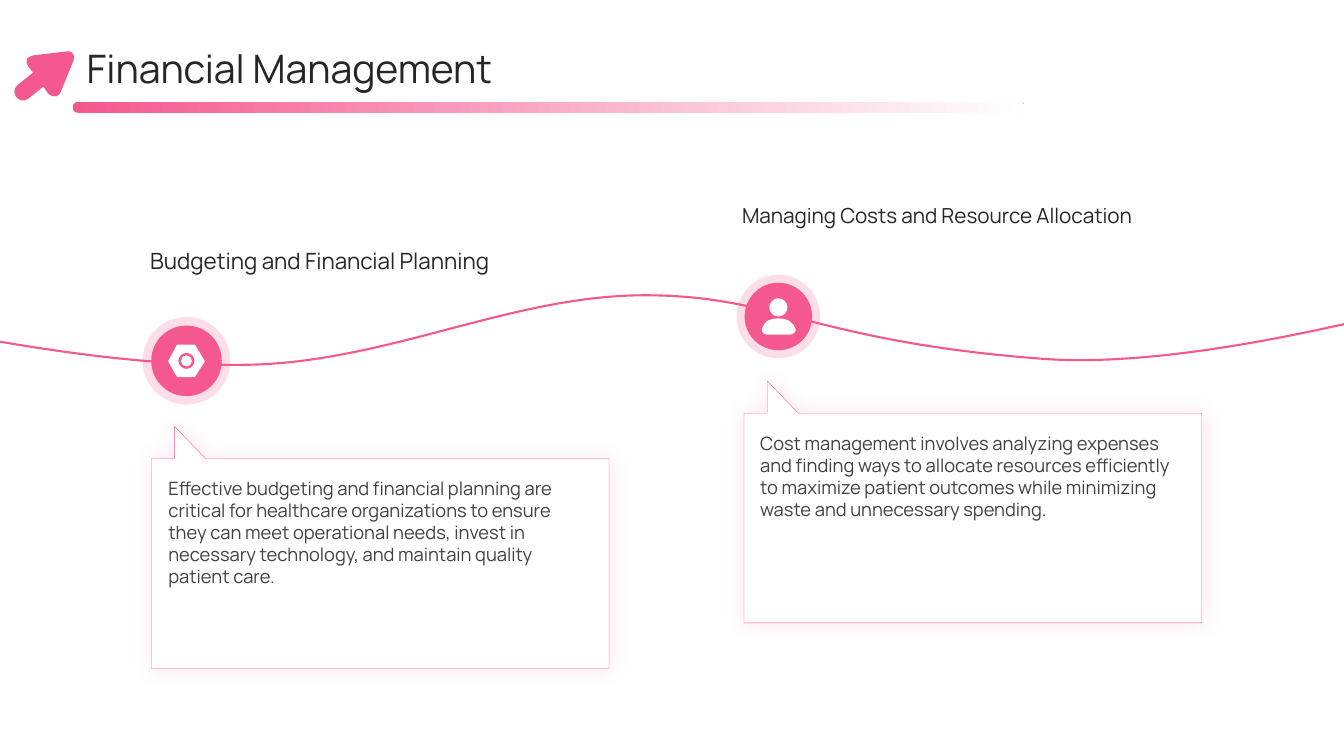
from dataclasses import dataclass

from lxml import etree
from pptx import Presentation
from pptx.dml.color import RGBColor
from pptx.enum.shapes import MSO_SHAPE
from pptx.enum.text import MSO_ANCHOR, MSO_AUTO_SIZE, PP_ALIGN
from pptx.oxml.ns import qn
from pptx.util import Inches, Pt

ELLIPSE = MSO_SHAPE.OVAL
ROUNDED = MSO_SHAPE.ROUNDED_RECTANGLE
LEFT = PP_ALIGN.LEFT
TOP, MIDDLE = MSO_ANCHOR.TOP, MSO_ANCHOR.MIDDLE
NO_AUTOFIT = MSO_AUTO_SIZE.NONE

FONT = "Manrope"
SLIDE_WIDTH, SLIDE_HEIGHT = 13.33, 7.5
COLORS = {"pink": "F4588E", "white": "FFFFFF", "heading": "262626", "body": "404040"}

Point = tuple[float, float]
# A path starts at a point; later steps are line ends (2 numbers) or cubic curves (6 numbers).
Path = list[tuple[float, ...]]

WAVE: Path = [(-2.16, 2.96), (-0.6, 3.29, 0.96, 3.63, 2.38, 3.62),
              (3.79, 3.62, 5.03, 2.94, 6.36, 2.93), (7.69, 2.92, 8.07, 3.39, 10.34, 3.56),
              (12.61, 3.73, 16.85, 2.2, 17.57, 1.97)]
ARROW: Path = [(0.27, 0.58), (0.26, 0.6, 0.26, 0.62, 0.28, 0.66), (0.33, 0.72), (0.18, 0.84),
               (0.14, 0.87, 0.13, 0.92, 0.16, 0.96), (0.19, 1, 0.24, 1.01, 0.28, 0.98),
               (0.43, 0.86), (0.48, 0.93), (0.48, 0.93, 0.55, 1, 0.6, 0.92), (0.73, 0.6),
               (0.73, 0.6, 0.76, 0.5, 0.66, 0.51), (0.33, 0.55), (0.33, 0.55, 0.29, 0.56, 0.27, 0.58)]
# Callout and icon outlines are measured from the callout corner and the badge centre.
CALLOUT: Path = [(0.23, 0), (0.54, 0.32), (4.54, 0.32), (4.54, 2.4), (0, 2.4), (0, 0.32), (0.23, 0.32)]
NUT: Path = [(-0.09, -0.16), (0.08, -0.16), (0.09, -0.16, 0.09, -0.16, 0.09, -0.15), (0.18, 0),
             (0.18, 0, 0.18, 0.01, 0.18, 0.01), (0.09, 0.15), (0.09, 0.16, 0.09, 0.16, 0.08, 0.16),
             (-0.09, 0.16), (-0.09, 0.16, -0.1, 0.16, -0.1, 0.15), (-0.18, 0.01),
             (-0.18, 0.01, -0.18, 0, -0.18, 0), (-0.1, -0.15), (-0.1, -0.16, -0.09, -0.16, -0.09, -0.16)]
SHOULDERS: Path = [(0, 0.02), (0.11, 0.02, 0.15, 0.07, 0.17, 0.12), (0.18, 0.15, 0.15, 0.18, 0.12, 0.18),
                   (-0.11, 0.18), (-0.15, 0.18, -0.17, 0.15, -0.16, 0.12),
                   (-0.15, 0.07, -0.11, 0.02, 0, 0.02)]


@dataclass
class Milestone:
    heading: str
    heading_at: Point
    heading_size: float
    body: str
    body_at: Point
    callout_at: Point
    center: Point
    halo: float
    disc: float
    icon: list[Path]


def circle(radius: float, y: float = 0) -> Path:
    """Four curves around a point on the vertical axis."""
    r, k = radius, radius * 0.55
    return [(0, y - r), (k, y - r, r, y - k, r, y), (r, y + k, k, y + r, 0, y + r),
            (-k, y + r, -r, y + k, -r, y), (-r, y - k, -k, y - r, 0, y - r)]


def rgb(name: str) -> RGBColor:
    return RGBColor.from_string(COLORS[name])


def paint(shape, fill: str | None, line: str | None = None, width: float = 0, alpha: int = 100):
    shape.shadow.inherit = False
    if fill:
        shape.fill.solid()
        shape.fill.fore_color.rgb = rgb(fill)
        if alpha < 100:
            color = shape.fill._xPr.find(qn("a:solidFill"))[0]
            etree.SubElement(color, qn("a:alpha"), val=str(alpha * 1000))
    else:
        shape.fill.background()
    if line:
        shape.line.color.rgb = rgb(line)
        shape.line.width = Pt(width)
    else:
        shape.line.fill.background()
    return shape


def add_outline(slide, paths: list[Path], origin: Point = (0, 0), closed: bool = True):
    """Build a freeform, then join the line triples that stand for curves."""
    left, top = origin
    builder = None
    for path in paths:
        start, *points = [(Inches(left + step[i]), Inches(top + step[i + 1]))
                          for step in path for i in range(0, len(step), 2)]
        if builder is None:
            builder = slide.shapes.build_freeform(*start, scale=1.0)
        else:
            builder.move_to(*start)
        builder.add_line_segments(points, close=closed)
    shape = builder.convert_to_shape()

    segments = iter(list(shape._element.spPr.iter(qn("a:lnTo"))))
    for step in (step for path in paths for step in path[1:]):
        first = next(segments)
        if len(step) == 6:
            curve = etree.Element(qn("a:cubicBezTo"))
            first.addprevious(curve)
            for segment in (first, next(segments), next(segments)):
                curve.append(segment[0])
                segment.getparent().remove(segment)
    return shape


def add_glow_shadow(shape) -> None:
    effects = shape._element.spPr.find(qn("a:effectLst"))
    shadow = etree.SubElement(effects, qn("a:outerShdw"), blurRad=str(Pt(15)), dist="0", dir="0",
                              algn="ctr", rotWithShape="0")
    color = etree.SubElement(shadow, qn("a:srgbClr"), val=COLORS["pink"])
    etree.SubElement(color, qn("a:alpha"), val="15000")


def place(shape, left: float, top: float, width: float, height: float) -> None:
    shape.left, shape.top, shape.width, shape.height = map(Inches, (left, top, width, height))


def write(shape, text: str, *, size: float, color: str, anchor=TOP) -> None:
    frame = shape.text_frame
    frame.word_wrap = True
    frame.auto_size = NO_AUTOFIT
    frame.vertical_anchor = anchor
    frame.margin_left = frame.margin_top = frame.margin_right = frame.margin_bottom = 0
    paragraph = frame.paragraphs[0]
    paragraph.alignment = LEFT
    run = paragraph.add_run()
    run.text = text
    run.font.name, run.font.size = FONT, Pt(size)
    run.font.color.rgb = rgb(color)


def add_text(slide, text: str, at: Point, width: float, height: float, **text_format) -> None:
    box = slide.shapes.add_textbox(*map(Inches, (*at, width, height)))
    write(box, text, **text_format)


def add_disc(slide, center: Point, diameter: float, alpha: int = 100) -> None:
    left, top = (value - diameter / 2 for value in center)
    disc = slide.shapes.add_shape(ELLIPSE, *map(Inches, (left, top, diameter, diameter)))
    paint(disc, "pink", alpha=alpha)


def add_milestone(slide, item: Milestone) -> None:
    callout = paint(add_outline(slide, [CALLOUT], item.callout_at), "white", "pink", 0.25)
    add_glow_shadow(callout)
    add_text(slide, item.heading, item.heading_at, 4.55, 0.34, size=item.heading_size, color="heading")
    add_disc(slide, item.center, item.halo, alpha=20)
    add_disc(slide, item.center, item.disc)
    paint(add_outline(slide, item.icon, item.center), "white")
    add_text(slide, item.body, item.body_at, 4.19, 1.61, size=13.1, color="body")


MILESTONES = [
    Milestone("Budgeting and Financial Planning", (1.49, 2.45), 16,
              "Effective budgeting and financial planning are critical for healthcare organizations "
              "to ensure they can meet operational needs, invest in necessary technology, and "
              "maintain quality patient care.",
              (1.67, 4.73), (1.5, 4.23), (1.85, 3.58), 0.87, 0.7,
              [circle(0.055), circle(0.08), NUT]),
    Milestone("Managing Costs and Resource Allocation", (7.36, 2.01), 14.8,
              "Cost management involves analyzing expenses and finding ways to allocate resources "
              "efficiently to maximize patient outcomes while minimizing waste and unnecessary spending.",
              (7.54, 4.29), (7.38, 3.78), (7.72, 3.14), 0.83, 0.67,
              [SHOULDERS, circle(0.09, -0.09)]),
]


def main() -> None:
    presentation = Presentation()
    presentation.slide_width, presentation.slide_height = Inches(SLIDE_WIDTH), Inches(SLIDE_HEIGHT)
    slide = presentation.slides.add_slide(presentation.slide_layouts[5])

    # Wave across the slide with its milestones
    paint(add_outline(slide, [WAVE], closed=False), None, "pink", 1.5)
    for item in MILESTONES:
        add_milestone(slide, item)

    # Title with fading bar and arrow
    place(slide.shapes.title, 0.86, 0.42, 11.67, 0.51)
    write(slide.shapes.title, "Financial Management", size=28, color="heading", anchor=MIDDLE)
    bar = paint(slide.shapes.add_shape(ROUNDED, *map(Inches, (0.72, 1.01, 9.44, 0.11))), "pink")
    bar.adjustments[0] = 0.5
    bar.fill.gradient()
    bar.fill.gradient_angle = 0
    for stop, color in zip(bar.fill.gradient_stops, ("pink", "white")):
        stop.color.rgb = rgb(color)
    paint(add_outline(slide, [ARROW]), "pink")
    presentation.save("out.pptx")


if __name__ == "__main__":
    main()
